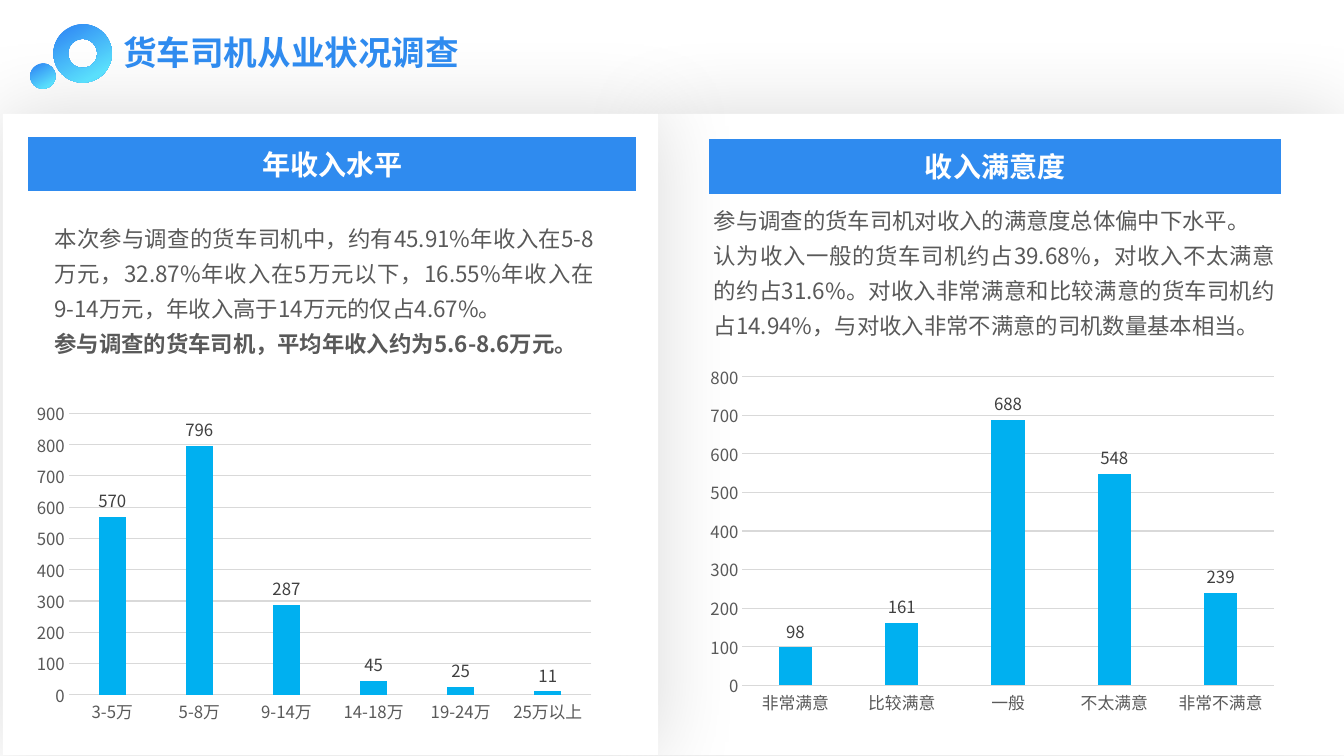
"""Build the slide on truck drivers' income and income satisfaction."""
from dataclasses import dataclass

from lxml.etree import SubElement
from pptx import Presentation
from pptx.chart.data import CategoryChartData
from pptx.dml.color import RGBColor
from pptx.enum.chart import XL_CHART_TYPE as ChartType, XL_LABEL_POSITION as LabelPosition
from pptx.enum.chart import XL_TICK_MARK as TickMark
from pptx.enum.lang import MSO_LANGUAGE_ID as Language
from pptx.enum.shapes import MSO_SHAPE as Preset
from pptx.enum.text import MSO_ANCHOR as Anchor, MSO_AUTO_SIZE as AutoSize, PP_ALIGN as Align
from pptx.oxml.ns import qn
from pptx.util import Inches, Pt

FONT = "Noto Sans CJK SC"
COLORS = {
    "white": "FFFFFF", "blue": "2F8BEF", "text": "595959", "label": "404040",
    "grid": "D9D9D9", "column": "00B0F0", "shadow": "000000",
    "deep": "338FF5", "cyan": "5ADFFC",
}


@dataclass(frozen=True)
class Area:
    left: float
    top: float
    width: float
    height: float

    def lengths(self) -> tuple:
        return tuple(Inches(n) for n in (self.left, self.top, self.width, self.height))


@dataclass(frozen=True)
class Span:
    text: str
    size: int
    color: str
    bold: bool = False


@dataclass(frozen=True)
class Section:
    heading: Span
    bar: Area
    body: tuple[Span, ...]
    body_area: Area
    heading_index: int
    body_index: int
    chart_area: Area
    values: dict[str, int]
    top_value: int


PANELS = (Area(6.53, 1.13, 6.8, 6.36), Area(0.03, 1.13, 6.5, 6.36))
RINGS = ((Preset.DONUT, Area(0.53, 0.24, 0.58, 0.58)), (Preset.OVAL, Area(0.3, 0.63, 0.25, 0.25)))
TITLE = Span("货车司机从业状况调查", 24, "blue", True)
SECTIONS = (
    Section(
        Span("收入满意度", 20, "white", True), Area(7.03, 1.38, 5.68, 0.54),
        (Span("参与调查的货车司机对收入的满意度总体偏中下水平。", 16, "text"),
         Span("认为收入一般的货车司机约占39.68%，对收入不太满意的约占31.6%。"
              "对收入非常满意和比较满意的货车司机约占14.94%，"
              "与对收入非常不满意的司机数量基本相当。", 16, "text")),
        Area(6.98, 1.92, 5.77, 1.5), 3, 4, Area(6.93, 3.54, 5.82, 3.62),
        {"非常满意": 98, "比较满意": 161, "一般": 688, "不太满意": 548, "非常不满意": 239}, 800,
    ),
    Section(
        Span("年收入水平", 20, "white", True), Area(0.28, 1.36, 6.03, 0.54),
        (Span("本次参与调查的货车司机中，约有45.91%年收入在5-8万元，32.87%年收入在5万元以下，"
              "16.55%年收入在9-14万元，年收入高于14万元的仅占4.67%。", 16, "text"),
         Span("参与调查的货车司机，平均年收入约为5.6-8.6万元。", 16, "text", True)),
        Area(0.44, 2.1, 5.55, 1.5), 1, 2, Area(0.25, 3.91, 5.73, 3.34),
        {"3-5万": 570, "5-8万": 796, "9-14万": 287, "14-18万": 45, "19-24万": 25, "25万以上": 11},
        900,
    ),
)


def rgb(name: str) -> RGBColor:
    return RGBColor.from_string(COLORS[name])


def style_font(font, size: int, color: str, bold: bool = False) -> None:
    font.size, font.bold, font.name = Pt(size), bold, FONT
    font.color.rgb = rgb(color)
    SubElement(font._element, qn("a:ea"), typeface=FONT)


def add_plain(page, preset, area: Area):
    box = page.shapes.add_shape(preset, *area.lengths())
    box.shadow.inherit = False
    box.line.fill.background()
    return box


def add_panel(page, area: Area) -> None:
    box = add_plain(page, Preset.RECTANGLE, area)
    box.fill.solid()
    box.fill.fore_color.rgb = rgb("white")
    effects = box._element.spPr.find(qn("a:effectLst"))
    shadow = SubElement(effects, qn("a:outerShdw"), blurRad=str(Pt(60)), dist="0",
                        algn="ctr", rotWithShape="0")
    color = SubElement(shadow, qn("a:srgbClr"), val=COLORS["shadow"])
    SubElement(color, qn("a:alpha"), val="15000")


def add_ring(page, preset, area: Area) -> None:
    box = add_plain(page, preset, area)
    box.fill.gradient()
    box.fill.gradient_angle = 300
    for stop, color, position in zip(box.fill.gradient_stops, ("deep", "cyan"), (0.12, 0.82)):
        stop.color.rgb, stop.position = rgb(color), position


def add_bar(page, area: Area) -> None:
    box = add_plain(page, Preset.PARALLELOGRAM, area)
    box.adjustments[0] = 0
    box.fill.solid()
    box.fill.fore_color.rgb = rgb("blue")


def fill_placeholder(page, index: int, area: Area, spans: tuple[Span, ...],
                     align=Align.JUSTIFY, anchor=Anchor.TOP, spacing=1.0) -> None:
    """Place, fill and raise a template placeholder to the front."""
    box = next(item for item in page.placeholders if item.placeholder_format.idx == index)
    box.left, box.top, box.width, box.height = area.lengths()
    page.shapes._spTree.append(box._element)
    frame = box.text_frame
    frame.auto_size, frame.word_wrap, frame.vertical_anchor = AutoSize.NONE, True, anchor
    for number, span in enumerate(spans):
        para = frame.add_paragraph() if number else frame.paragraphs[0]
        para.alignment, para.line_spacing, para.space_before = align, spacing, Pt(0)
        settings = para._p.get_or_add_pPr()
        settings.set("marL", "0")
        settings.set("indent", "0")
        SubElement(settings, qn("a:buNone"))
        run = para.add_run()
        run.text = span.text
        run.font.language_id = Language.SIMPLIFIED_CHINESE
        style_font(run.font, span.size, span.color, span.bold)


def add_columns(page, section: Section) -> None:
    data = CategoryChartData()
    data.categories = list(section.values)
    data.add_series("人数", list(section.values.values()))
    chart = page.shapes.add_chart(
        ChartType.COLUMN_CLUSTERED, *section.chart_area.lengths(), data).chart
    chart.has_legend = chart.has_title = False
    style_font(chart.font, 12, "text")
    plot = chart.plots[0]
    plot.gap_width, plot.overlap, plot.vary_by_categories = 219, -27, False
    fill = plot.series[0].format.fill
    fill.solid()
    fill.fore_color.rgb = rgb("column")
    plot.has_data_labels = True
    labels = plot.data_labels
    labels.show_value, labels.position = True, LabelPosition.OUTSIDE_END
    style_font(labels.font, 12, "label")
    values = chart.value_axis
    values.minimum_scale, values.maximum_scale, values.major_unit = 0, section.top_value, 100
    values.format.line.fill.background()
    for axis in (chart.category_axis, values):
        axis.major_tick_mark = axis.minor_tick_mark = TickMark.NONE
        style_font(axis.tick_labels.font, 12, "text")
    for line in (chart.category_axis.format.line, values.major_gridlines.format.line):
        line.color.rgb, line.width = rgb("grid"), Pt(0.75)


def main() -> None:
    deck = Presentation()
    deck.slide_width, deck.slide_height = Inches(13.33), Inches(7.5)
    page = deck.slides.add_slide(deck.slide_layouts.get_by_name("Comparison"))
    for area in PANELS:
        add_panel(page, area)
    for preset, area in RINGS:
        add_ring(page, preset, area)
    fill_placeholder(page, 0, Area(1.12, 0.27, 3.69, 0.5), (TITLE,))
    for section in SECTIONS:
        add_bar(page, section.bar)
        fill_placeholder(page, section.heading_index, section.bar, (section.heading,),
                         Align.CENTER, Anchor.MIDDLE)
        fill_placeholder(page, section.body_index, section.body_area, section.body,
                         spacing=Pt(25))
        add_columns(page, section)
    deck.save("out.pptx")


if __name__ == "__main__":
    main()
